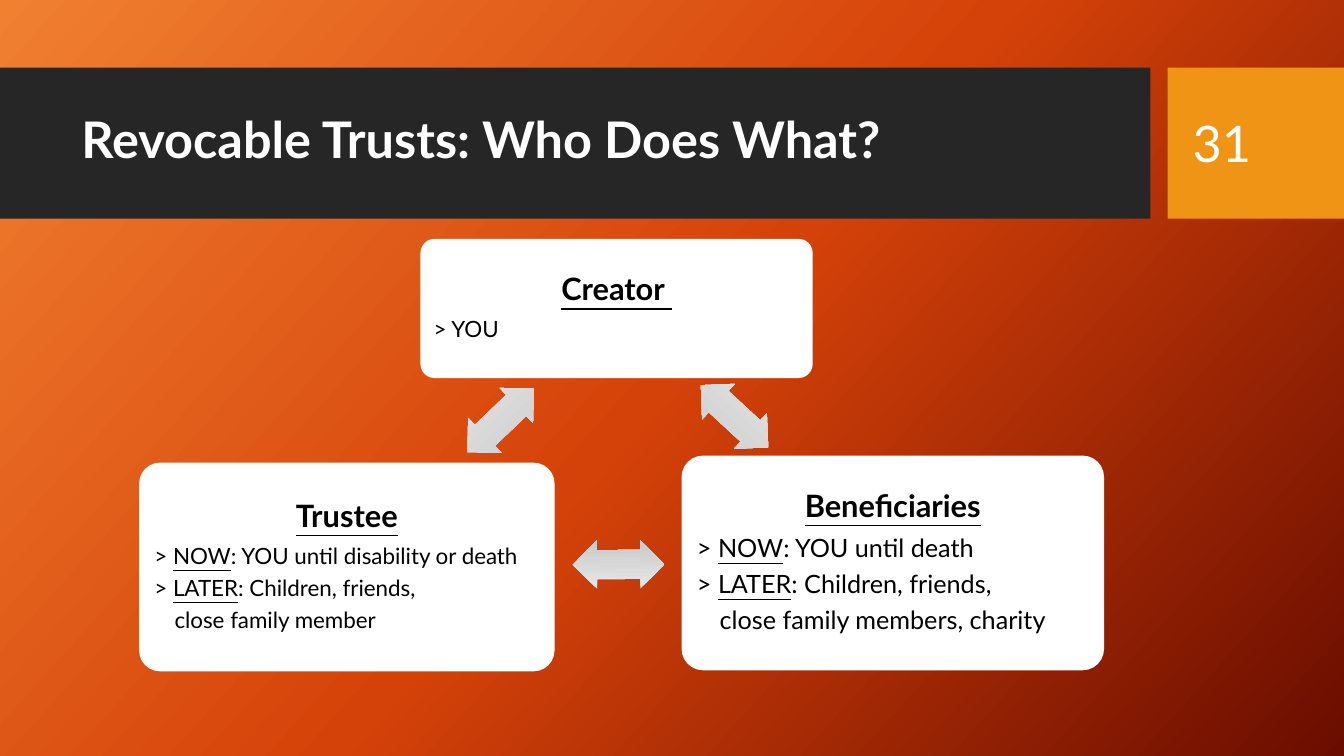
from lxml.etree import SubElement
from pptx import Presentation
from pptx.dml.color import RGBColor
from pptx.enum.shapes import MSO_SHAPE
from pptx.enum.text import MSO_ANCHOR, PP_ALIGN
from pptx.oxml.ns import qn
from pptx.util import Inches, Pt

WIDE, HIGH = 13.33, 7.5
FONT = "Lato"
TITLE = "Revocable Trusts: Who Does What?"
PAGE = "31"
BACK = [(0, "F18031"), (50, "D54209"), (100, "6A0D00")]
GRAY = [(0, "E7E7E7"), (100, "C9C9C9")]
BAND = (0.67, 1.5)
BARS = [(0, 11.41, "262626"), (11.58, 1.75, "F09415")]
HEADS = [((0.71, 0.77, 10.29, 1.29), TITLE, True, 0.9),
         ((11.73, 0.82, 1.26, 1.19), PAGE, False, 1.0)]
CARDS = [
    ((4.17, 2.37, 3.89, 1.38), "Creator ", 16, [("> YOU",)]),
    ((6.76, 4.52, 4.19, 2.13), "Beneficiaries", 18, [
        ("> ", "NOW", ": YOU until death"),
        ("> ", "LATER", ": Children, friends,"),
        ("", "", "close family members, charity")]),
    ((1.38, 4.59, 4.12, 2.07), "Trustee", 16, [
        ("> ", "NOW", ": YOU until disability or death"),
        ("> ", "LATER", ": Children, friends,"),
        ("", "", "close family member")]),
]
ARROWS = [(6.83, 3.89, 42.7), (5.68, 5.36, 179.6), (4.51, 3.93, 316.3)]
ARROW = (0.91, 0.48)


def color(code):
    """Turn a hex string into a colour."""
    return RGBColor.from_string(code)


def blend(fill, owner, stops, angle):
    """Fill with a linear gradient, its angle measured clockwise."""
    fill.gradient()
    fill.gradient_angle = 360 - angle
    ramp = next(owner.iter(qn("a:gsLst")))
    ramp.clear()
    for share, code in stops:
        stop = SubElement(ramp, qn("a:gs"), pos=str(share * 1000))
        SubElement(stop, qn("a:srgbClr"), val=code)


def draw(slide, kind, box, code=None):
    """Add a flat shape without outline."""
    shape = slide.shapes.add_shape(kind, *map(Inches, box))
    shape.shadow.inherit = False
    shape.line.fill.background()
    if code:
        shape.fill.solid()
        shape.fill.fore_color.rgb = color(code)
    return shape


def style(para, size, code, bold=False, lead=0.9):
    """Set the font and line spacing of a paragraph."""
    para.line_spacing = lead
    font = para.font
    font.name, font.size, font.bold = FONT, Pt(size), bold
    font.color.rgb = color(code)


def add_card(slide, box, name, size, lines):
    """Add a rounded card with a heading and its lines."""
    card = draw(slide, MSO_SHAPE.ROUNDED_RECTANGLE, box, "FFFFFF")
    card.adjustments[0] = 0.1
    frame = card.text_frame
    frame.word_wrap = True
    frame.vertical_anchor = MSO_ANCHOR.MIDDLE
    frame.margin_left = frame.margin_right = Inches(0.09)
    frame.margin_top = frame.margin_bottom = Inches(0.09)
    head = frame.paragraphs[0]
    head.text = name
    head.alignment = PP_ALIGN.CENTER
    style(head, 22, "000000", True)
    head.font.underline = True
    head.space_after = Pt(22 * 0.35)
    for parts in lines:
        para = frame.add_paragraph()
        para.alignment = PP_ALIGN.LEFT
        if not parts[0]:
            para._p.get_or_add_pPr().set("marL", str(Pt(size * 0.9)))
        style(para, size, "000000")
        para.space_after = Pt(size * 0.35)
        for spot, text in enumerate(parts):
            if text:
                run = para.add_run()
                run.text = text
                run.font.underline = spot == 1


def main():
    """Build the slide and save it."""
    deck = Presentation()
    deck.slide_width, deck.slide_height = Inches(WIDE), Inches(HIGH)
    slide = deck.slides.add_slide(deck.slide_layouts[6])
    blend(slide.background.fill, slide.element, BACK, 42)
    top, tall = BAND
    for left, wide, code in BARS:
        draw(slide, MSO_SHAPE.RECTANGLE, (left, top, wide, tall), code)
    for box, text, bold, lead in HEADS:
        frame = slide.shapes.add_textbox(*map(Inches, box)).text_frame
        frame.word_wrap = True
        frame.vertical_anchor = MSO_ANCHOR.MIDDLE
        frame.text = text
        style(frame.paragraphs[0], 36, "FFFFFF", bold, lead)
    for card in CARDS:
        add_card(slide, *card)
    for left, top, turn in ARROWS:
        arrow = draw(slide, MSO_SHAPE.LEFT_RIGHT_ARROW, (left, top, *ARROW))
        arrow.adjustments[0], arrow.adjustments[1] = 0.6, 0.5
        arrow.rotation = turn
        blend(arrow.fill, arrow.element, GRAY, 90)
    deck.save("out.pptx")


if __name__ == "__main__":
    main()
